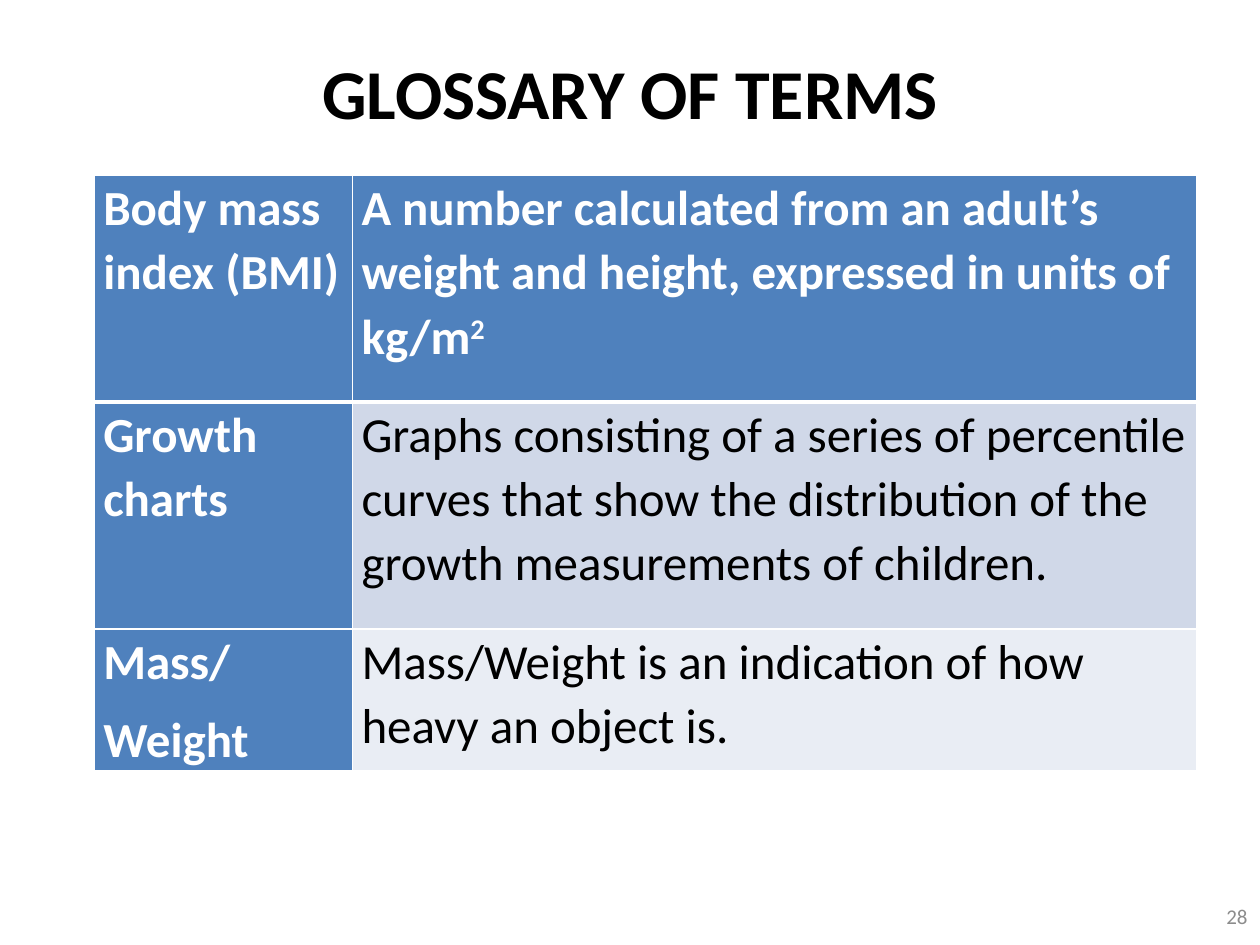
from lxml.etree import SubElement
from pptx import Presentation
from pptx.dml.color import RGBColor
from pptx.enum.text import MSO_ANCHOR, PP_ALIGN
from pptx.oxml.ns import qn
from pptx.util import Inches, Pt

# Content: each cell is a list of paragraphs, each paragraph a list of (text, superscript)
TITLE = "GLOSSARY OF TERMS"
PAGE_NUMBER = "28"
GLOSSARY = [
    ([[("Body mass index (BMI)", False)]],
     [[("A number calculated from an adult’s weight and height, "
        "expressed in units of kg/m", False), ("2", True)]]),
    ([[("Growth charts", False)]],
     [[("Graphs consisting of a series of percentile curves that show the "
        "distribution of the growth measurements of children.", False)]]),
    ([[("Mass/", False)], [("Weight", False)]],
     [[("Mass/Weight is an indication of how heavy an object is.", False)]]),
]
COLUMN_WIDTHS = (2.05, 6.7)
ROW_HEIGHTS = (1.8, 1.8, 0.88)

# Colours and formats
BLACK = RGBColor(0x00, 0x00, 0x00)
WHITE = RGBColor(0xFF, 0xFF, 0xFF)
GREY = RGBColor(0x8C, 0x8C, 0x8C)
BLUE = RGBColor(0x4F, 0x81, 0xBD)
BANDS = (RGBColor(0xE9, 0xED, 0xF4), RGBColor(0xD0, 0xD8, 0xE8))

TITLE_FONT = {"name": "Calibri", "size": Pt(40), "bold": True}
NUMBER_FONT = {"name": "Calibri", "size": Pt(12)}
TERM_FONT = {"name": "Calibri", "size": Pt(28), "bold": True}
MEANING_FONT = {**TERM_FONT, "bold": False}
CELL_MARGINS = {"margin_left": Inches(0.07), "margin_right": Inches(0.07),
                "margin_top": 0, "margin_bottom": 0}
CELL_SPACING = {"line_spacing": 1.07, "space_after": Pt(8)}


def apply(target, values):
    for name, value in values.items():
        setattr(target, name, value)


def place(shape, left, top, width, height):
    apply(shape, {"left": Inches(left), "top": Inches(top),
                  "width": Inches(width), "height": Inches(height)})


def write_line(shape, text, align, font, color):
    frame = shape.text_frame
    apply(frame, {"word_wrap": True, "vertical_anchor": MSO_ANCHOR.MIDDLE})
    paragraph = frame.paragraphs[0]
    paragraph.alignment = align
    run = paragraph.add_run()
    run.text = text
    apply(run.font, font)
    run.font.color.rgb = color


def add_borders(cell, widths):
    properties = cell._tc.get_or_add_tcPr()
    for side, width in widths.items():
        line = SubElement(properties, qn(f"a:ln{side}"), w=str(Pt(width)))
        fill = SubElement(line, qn("a:solidFill"))
        SubElement(fill, qn("a:srgbClr"), val=str(WHITE))


def write_cell(cell, paragraphs, font, color):
    frame = cell.text_frame
    for index, pieces in enumerate(paragraphs):
        paragraph = frame.add_paragraph() if index else frame.paragraphs[0]
        apply(paragraph, CELL_SPACING)
        for text, superscript in pieces:
            run = paragraph.add_run()
            run.text = text
            apply(run.font, font)
            run.font.color.rgb = color
            if superscript:
                run._r.get_or_add_rPr().set("baseline", "30000")


def main():
    deck = Presentation()
    deck.slide_width, deck.slide_height = Inches(10), Inches(7.5)
    slide = deck.slides.add_slide(deck.slide_layouts[5])

    # Title
    title = slide.shapes.title
    place(title, 0.5, 0.3, 9, 0.85)
    write_line(title, TITLE, PP_ALIGN.CENTER, TITLE_FONT, BLACK)

    # Glossary table
    table = slide.shapes.add_table(
        len(GLOSSARY), len(COLUMN_WIDTHS), Inches(0.75), Inches(1.39),
        Inches(sum(COLUMN_WIDTHS)), Inches(sum(ROW_HEIGHTS))).table
    table.first_col = True
    for column, width in zip(table.columns, COLUMN_WIDTHS):
        column.width = Inches(width)
    for row, height in zip(table.rows, ROW_HEIGHTS):
        row.height = Inches(height)
    for r, entry in enumerate(GLOSSARY):
        for c, paragraphs in enumerate(entry):
            cell = table.cell(r, c)
            is_header = r == 0 or c == 0
            apply(cell, CELL_MARGINS)
            add_borders(cell, {"L": 1, "R": 1, "T": 3 if r == 1 else 1,
                               "B": 3 if r == 0 else 1})
            cell.fill.solid()
            cell.fill.fore_color.rgb = BLUE if is_header else BANDS[r % 2]
            write_cell(cell, paragraphs,
                       TERM_FONT if is_header else MEANING_FONT,
                       WHITE if is_header else BLACK)

    # Page number
    number = slide.shapes.add_textbox(
        Inches(7.67), Inches(7.07), Inches(2.33), Inches(0.4))
    write_line(number, PAGE_NUMBER, PP_ALIGN.RIGHT, NUMBER_FONT, GREY)

    deck.save("out.pptx")


if __name__ == "__main__":
    main()
